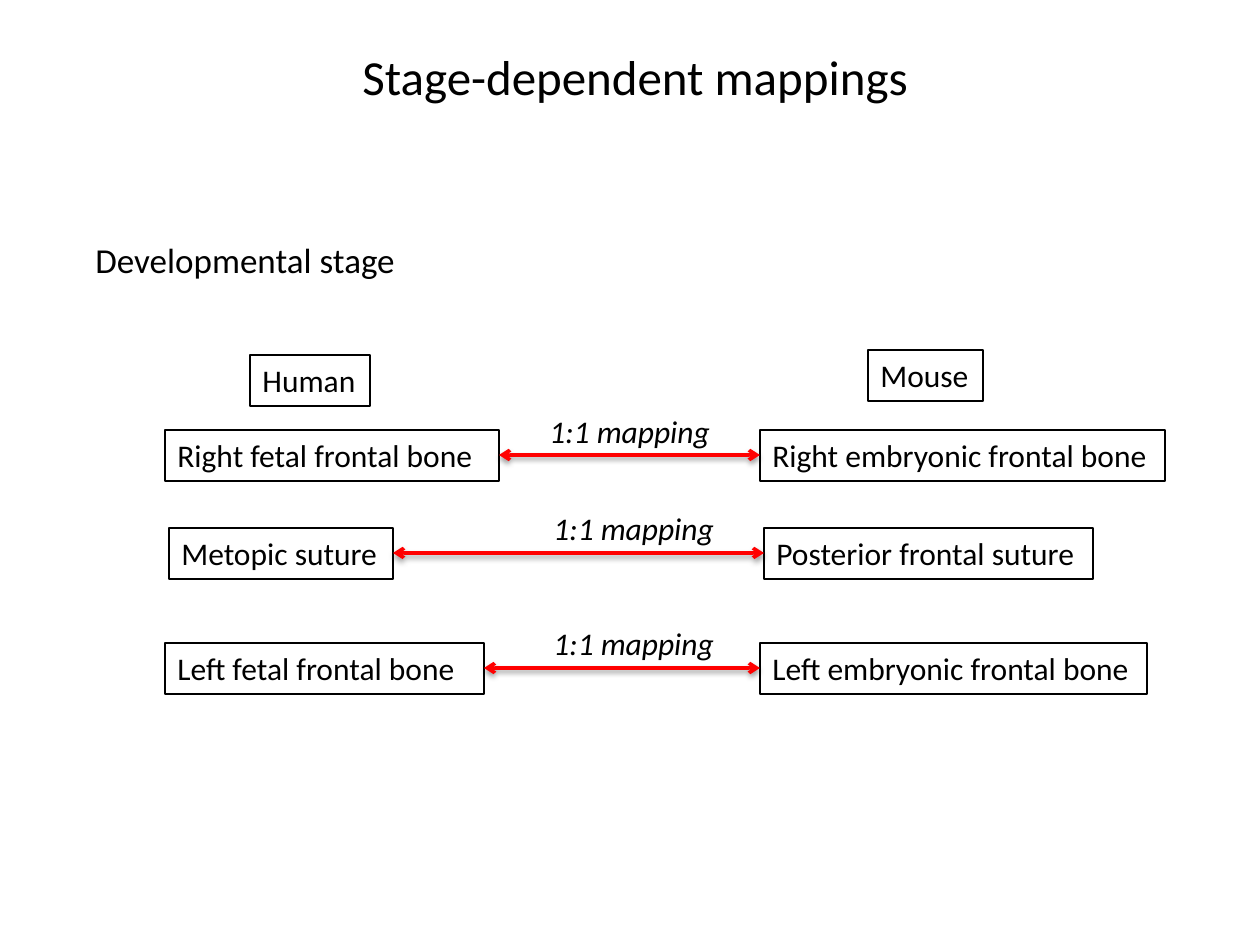
from lxml import etree
from pptx import Presentation
from pptx import util as u
from pptx.dml.color import RGBColor
from pptx.enum import shapes, text
from pptx.oxml.ns import qn

PX_PER_INCH = 126
BOX_HEIGHT = 51
BLACK, RED = "000000", "FF0000"

# Human term, mouse term (left, width, text), box top, label left and top
MAPPINGS = [
    ((165, 334, "Right fetal frontal bone"),
     (760, 405, "Right embryonic frontal bone"), 430, (537, 406)),
    ((169, 224, "Metopic suture"),
     (764, 329, "Posterior frontal suture"), 528, (541, 503)),
    ((165, 319, "Left fetal frontal bone"),
     (760, 387, "Left embryonic frontal bone"), 643, (541, 618)),
]


def px(length):
    return u.Emu(round(length * 914400 / PX_PER_INCH))


def color(hex_string):
    return RGBColor.from_string(hex_string)


def add_text(page, words, left, top, width, height=BOX_HEIGHT, *,
             size=18, italic=False, border=None):
    box = page.shapes.add_textbox(px(left), px(top), px(width), px(height))
    frame = box.text_frame
    frame.word_wrap = True
    frame.margin_right = 0
    frame.vertical_anchor = text.MSO_ANCHOR.TOP
    span = frame.paragraphs[0].add_run()
    span.text = words
    span.font.name = "Calibri"
    span.font.size = u.Pt(size)
    span.font.italic = italic
    span.font.color.rgb = color(BLACK)
    if border:
        box.line.color.rgb = color(border)
        box.line.width = u.Pt(0.75)
    return box


def add_shadow(properties):
    effects = etree.SubElement(properties, qn("a:effectLst"))
    shadow = etree.SubElement(
        effects, qn("a:outerShdw"), blurRad=str(u.Pt(3.1)),
        dist=str(u.Pt(1.6)), dir="5400000", rotWithShape="0")
    tint = etree.SubElement(shadow, qn("a:srgbClr"), val=BLACK)
    etree.SubElement(tint, qn("a:alpha"), val="38000")


def add_double_arrow(page, start, end, y):
    arrow = page.shapes.add_connector(
        shapes.MSO_CONNECTOR.STRAIGHT, px(start), px(y), px(end), px(y))
    arrow.line.color.rgb = color(RED)
    arrow.line.width = u.Pt(2)
    for tag in ("a:headEnd", "a:tailEnd"):
        etree.SubElement(arrow.line._get_or_add_ln(), qn(tag), type="arrow")
    add_shadow(arrow._element.spPr)


def add_mapping(page, human, mouse, top, label):
    for left, width, words in (human, mouse):
        add_text(page, words, left, top, width, border=BLACK)
    add_double_arrow(page, human[0] + human[1], mouse[0], top + BOX_HEIGHT // 2)
    add_text(page, "1:1 mapping", *label, 195, italic=True)


def main():
    deck = Presentation()
    deck.slide_width, deck.slide_height = px(1260), px(945)
    page = deck.slides.add_slide(deck.slide_layouts[6])

    # Headings
    add_text(page, "Stage-dependent mappings", 350, 40, 578, 72, size=28)
    add_text(page, "Developmental stage", 83, 232, 330, 55, size=20)

    # Species
    add_text(page, "Human", 250, 355, 120, border=BLACK)
    add_text(page, "Mouse", 868, 350, 115, border=BLACK)

    # Mapped terms
    for mapping in MAPPINGS:
        add_mapping(page, *mapping)

    deck.save("out.pptx")


if __name__ == "__main__":
    main()
